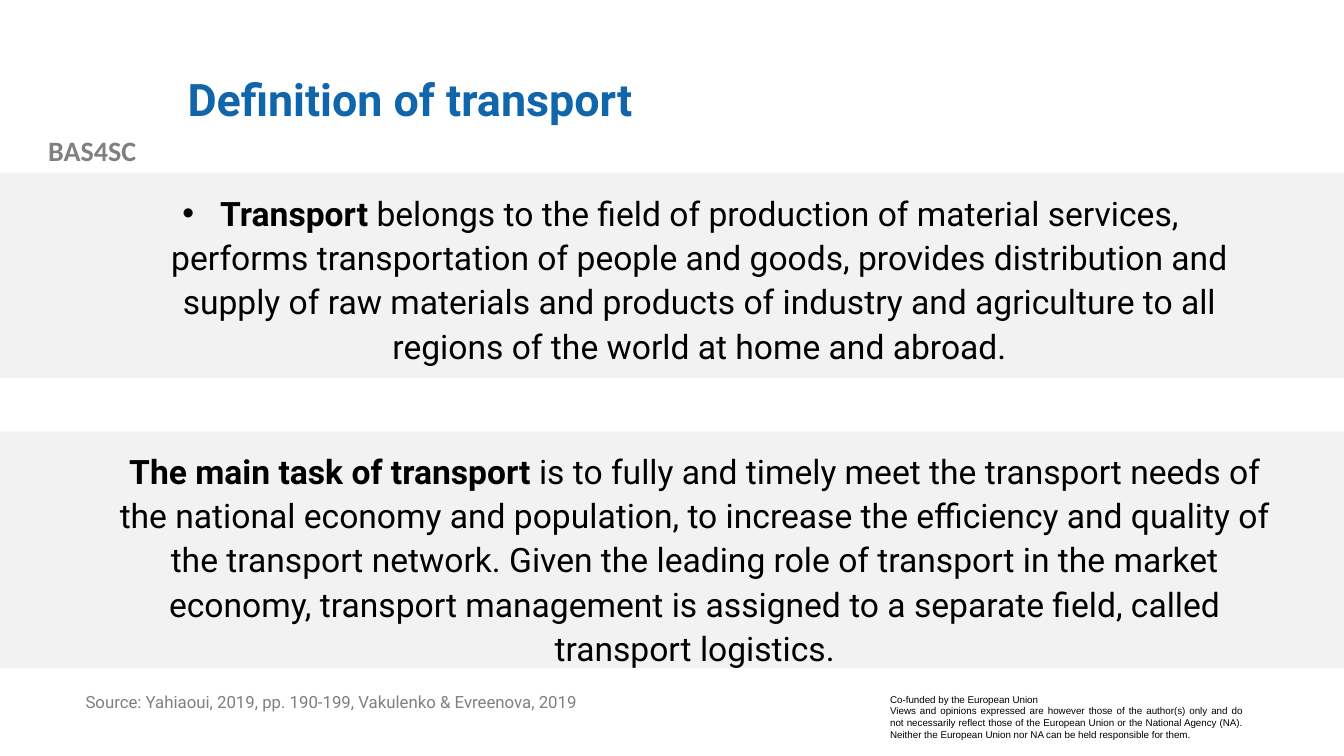
"""Builds the slide that defines transport and its main task."""
from lxml.etree import SubElement
from pptx import Presentation
from pptx.dml.color import RGBColor
from pptx.enum.shapes import MSO_SHAPE
from pptx.enum.text import MSO_ANCHOR, MSO_AUTO_SIZE, PP_ALIGN
from pptx.oxml.ns import qn
from pptx.util import Pt

EMU_PER_PX = 9144
COLORS = {
    "white": "FFFFFF",
    "band": "F2F2F2",
    "title": "1065AB",
    "text": "000000",
    "project": "808080",
    "source": "7F7F7F",
}
DEFINITION = (
    "Transport ",
    "belongs to the field of production of material services, performs "
    "transportation of people and goods, provides distribution and supply of raw "
    "materials and products of industry and agriculture to all regions of the "
    "world at home and abroad.",
)
MAIN_TASK = (
    "The main task of transport ",
    "is to fully and timely meet the transport needs of the national economy and "
    "population, to increase the efficiency and quality of the transport network. "
    "Given the leading role of transport in the market economy, transport "
    "management is assigned to a separate field, called transport logistics.",
)
FUNDING = (
    "Co-funded by the European Union",
    "Views and opinions expressed are however those of the author(s) only and do "
    "not necessarily reflect those of the European Union or the National Agency "
    "(NA). Neither the European Union nor NA can be held responsible for them.",
)


def px(length):
    """Turn pixels into EMU."""
    return length * EMU_PER_PX


def color(name):
    """Look up a named colour."""
    return RGBColor.from_string(COLORS[name])


def place(box, left, top, width, height):
    """Move and size a box."""
    box.left, box.top = px(left), px(top)
    box.width, box.height = px(width), px(height)


def add_box(page, left, top, width, height):
    """Add an empty text box."""
    return page.shapes.add_textbox(px(left), px(top), px(width), px(height))


def add_band(page, left, top, width, height, fill):
    """Add a plain filled rectangle."""
    band = page.shapes.add_shape(
        MSO_SHAPE.RECTANGLE, px(left), px(top), px(width), px(height)
    )
    band.shadow.inherit = False
    band.fill.solid()
    band.fill.fore_color.rgb = color(fill)
    band.line.fill.background()
    return band


def write(box, paragraphs, font, size, ink, align=PP_ALIGN.LEFT, spacing=1.0,
          anchor=MSO_ANCHOR.TOP, bold_spans=0):
    """Write paragraphs of spans, with the first spans of each one bold."""
    frame = box.text_frame
    frame.word_wrap = True
    frame.auto_size = MSO_AUTO_SIZE.NONE
    frame.vertical_anchor = anchor
    frame.text = "\n".join("" for _ in paragraphs)
    for para, spans in zip(frame.paragraphs, paragraphs):
        para.alignment = align
        para.line_spacing = spacing
        para.space_before = Pt(0)
        for index, text in enumerate(spans):
            span = para.add_run()
            span.text = text
            span.font.name = font
            span.font.size = Pt(size)
            span.font.bold = index < bold_spans
            span.font.color.rgb = color(ink)


def remove_bullet(para):
    """Drop the bullet and its hanging indent."""
    properties = para._p.get_or_add_pPr()
    properties.set("marL", "0")
    properties.set("indent", "0")
    SubElement(properties, qn("a:buNone"))


def write_statement(box, spans):
    """Write a large centred statement with a bold opening."""
    write(box, [spans], "Roboto", 24, "text", PP_ALIGN.CENTER, 1.1, bold_spans=1)


def main():
    """Build and save the deck."""
    deck = Presentation()
    deck.slide_width, deck.slide_height = px(1333), px(750)
    page = deck.slides.add_slide(deck.slide_layouts[1])
    title, body = page.placeholders

    project = add_box(page, 0, 128, 183, 44)
    write(project, [["BAS4SC"]], "Calibri", 20, "project", PP_ALIGN.CENTER,
          bold_spans=1)
    funding = add_band(page, 873, 683, 369, 57, "white")
    write(funding, [[text] for text in FUNDING], "Arial", 7, "text",
          PP_ALIGN.JUSTIFY)

    for top, height in ((428, 235), (171, 204)):
        band = add_band(page, 0, top, 1333, height, "band")
        page.shapes._spTree.insert(2, band._element)

    place(title, 176, 40, 1066, 122)
    write(title, [["Definition of transport"]], "Roboto", 32, "title",
          spacing=0.9, anchor=MSO_ANCHOR.MIDDLE, bold_spans=1)
    place(body, 100, 182, 1150, 198)
    remove_bullet(body.text_frame.paragraphs[0])
    write_statement(body, DEFINITION)
    write_statement(add_box(page, 93, 438, 1192, 226), MAIN_TASK)

    source = add_box(page, 75, 684, 560, 52)
    write(source, [["Source: Yahiaoui, 2019, pp. 190-199, Vakulenko & Evreenova, 2019"]],
          "Roboto", 12, "source", spacing=0.9)
    deck.save("out.pptx")


if __name__ == "__main__":
    main()
